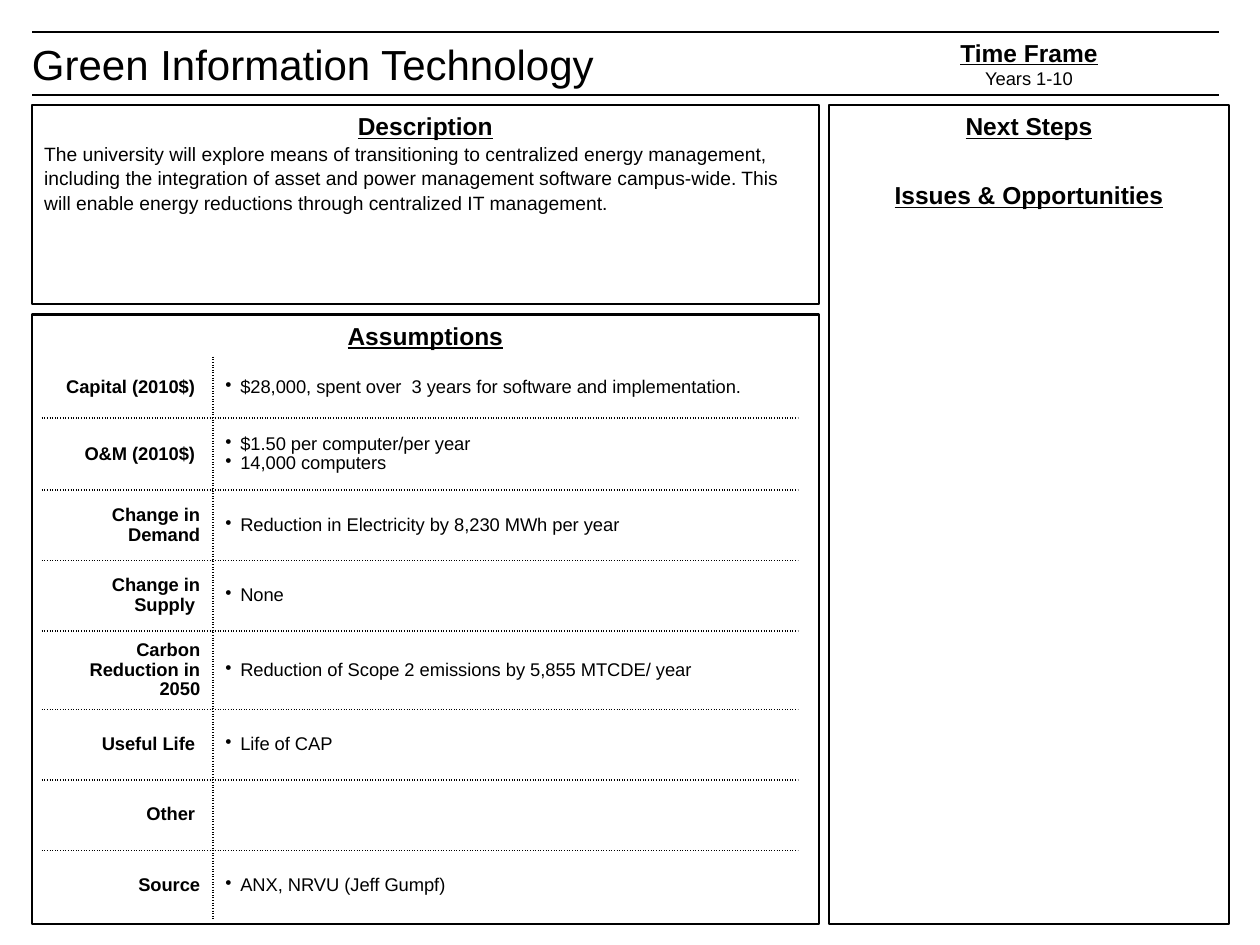
from collections import namedtuple
from dataclasses import dataclass

from lxml import etree
from pptx import Presentation, util as u
from pptx.dml import color
from pptx.enum import dml, shapes, text
from pptx.oxml import ns

Box = namedtuple("Box", "left top width height")  # centimetres


@dataclass(frozen=True)
class Theme:
    font: str = "Arial"
    ink: color.RGBColor = color.RGBColor(0, 0, 0)
    title: float = 24
    heading: float = 14
    body: float = 11
    small: float = 10.5
    rule: float = 1.25
    border: float = 1


THEME = Theme()
HEADING = dict(size=u.Pt(THEME.heading), bold=True, underline=True)
BODY = dict(size=u.Pt(THEME.body))
SMALL = dict(size=u.Pt(THEME.small))
LABEL = dict(SMALL, bold=True)
CENTER, RIGHT, LEFT = text.PP_ALIGN.CENTER, text.PP_ALIGN.RIGHT, text.PP_ALIGN.LEFT

DESCRIPTION = (
    "The university will explore means of transitioning to centralized energy "
    "management, including the integration of asset and power management software "
    "campus-wide. This will enable energy reductions through centralized IT management."
)
# label, row height in cm, bullet points
ASSUMPTIONS = [
    ("Capital (2010$) ", 1.24,
     ["$28,000, spent over  3 years for software and implementation."]),
    ("O&M (2010$) ", 1.45, ["$1.50 per computer/per year", "14,000 computers"]),
    ("Change in Demand", 1.42, ["Reduction in Electricity by 8,230 MWh per year"]),
    ("Change in Supply ", 1.42, ["None"]),
    ("Carbon Reduction in 2050", 1.58,
     ["Reduction of Scope 2 emissions by 5,855 MTCDE/ year"]),
    ("Useful Life ", 1.42, ["Life of CAP"]),
    ("Other ", 1.42, []),
    ("Source", 1.42, ["ANX, NRVU (Jeff Gumpf)"]),
]


def cm(box):
    return [u.Cm(length) for length in box]


def write(frame, lines, **layout):
    """Fill a text frame with (wording, font values, paragraph values)."""
    for name, value in layout.items():
        setattr(frame, name, value)
    for index, (wording, font, paragraph) in enumerate(lines):
        para = frame.paragraphs[0] if index == 0 else frame.add_paragraph()
        for name, value in paragraph.items():
            setattr(para, name, value)
        run = para.add_run()
        run.text = wording
        for name, value in dict(name=THEME.font, **font).items():
            setattr(run.font, name, value)
        run.font.color.rgb = THEME.ink


def add_rule(slide, left, right, height):
    rule = slide.shapes.add_connector(
        shapes.MSO_CONNECTOR.STRAIGHT,
        u.Cm(right), u.Cm(height), u.Cm(left), u.Cm(height))
    rule.line.color.rgb = THEME.ink
    rule.line.width = u.Pt(THEME.rule)
    etree.SubElement(rule._element.spPr, ns.qn("a:effectLst"))


def add_panel(slide, box, lines):
    panel = slide.shapes.add_shape(shapes.MSO_SHAPE.RECTANGLE, *cm(box))
    panel.shadow.inherit = False
    panel.fill.background()
    panel.line.color.rgb = THEME.ink
    panel.line.width = u.Pt(THEME.rule)
    write(panel.text_frame, lines, word_wrap=True,
          vertical_anchor=text.MSO_ANCHOR.TOP)


def add_bullet(para):
    properties = para._p.get_or_add_pPr()
    indent = u.Cm(0.3)
    properties.set("marL", str(indent))
    properties.set("indent", str(-indent))
    etree.SubElement(properties, ns.qn("a:buChar"), char="•")


def set_borders(cell, dotted):
    """Draw dotted lines on the named sides and none on the others."""
    properties = cell._tc.get_or_add_tcPr()
    for side in "LRTB":
        line = etree.SubElement(properties, ns.qn(f"a:ln{side}"),
                                w=str(u.Pt(THEME.border)))
        if side in dotted:
            fill = etree.SubElement(line, ns.qn("a:solidFill"))
            etree.SubElement(fill, ns.qn("a:srgbClr"), val=str(THEME.ink))
            etree.SubElement(line, ns.qn("a:prstDash"),
                             val=dml.MSO_LINE.ROUND_DOT.xml_value)
        else:
            etree.SubElement(line, ns.qn("a:noFill"))
    cell.fill.background()


def header(slide, box):
    title = slide.shapes.title
    title.left, title.top, title.width, title.height = cm(
        Box(box.left - 0.25, box.top, 15, box.height))
    write(title.text_frame,
          [("Green Information Technology", dict(size=u.Pt(THEME.title)),
            dict(alignment=LEFT))],
          word_wrap=False, auto_size=text.MSO_AUTO_SIZE.NONE,
          vertical_anchor=text.MSO_ANCHOR.MIDDLE)
    for height in (box.top, box.top + box.height):
        add_rule(slide, box.left, box.left + box.width, height)


def time_frame(slide, box):
    period = slide.shapes.add_textbox(*cm(box))
    write(period.text_frame,
          [("Time Frame", HEADING, dict(alignment=CENTER)),
           ("Years 1-10", SMALL, dict(alignment=CENTER))],
          word_wrap=True, vertical_anchor=text.MSO_ANCHOR.MIDDLE)


def description(slide, box):
    add_panel(slide, box, [
        ("Description", HEADING, dict(alignment=CENTER)),
        (DESCRIPTION, BODY, dict(alignment=LEFT, line_spacing=1.06))])


def next_steps(slide, box):
    add_panel(slide, box, [
        ("Next Steps", HEADING, dict(alignment=CENTER)),
        ("Issues & Opportunities", HEADING,
         dict(alignment=CENTER, space_before=u.Pt(22.5)))])


def assumptions(slide, box):
    add_panel(slide, box, [("Assumptions", HEADING, dict(alignment=CENTER))])
    heights = [height for _, height, _ in ASSUMPTIONS]
    grid = slide.shapes.add_table(
        len(ASSUMPTIONS), 2,
        *cm(Box(box.left + 0.2, box.top + 0.85, 15.24, sum(heights)))).table
    grid.first_row = grid.horz_banding = False
    for column, width in zip(grid.columns, (3.45, 11.79)):
        column.width = u.Cm(width)

    for index, (label, height, points) in enumerate(ASSUMPTIONS):
        grid.rows[index].height = u.Cm(height)
        label_cell, points_cell = grid.rows[index].cells
        tight = dict(line_spacing=0.97)
        write(label_cell.text_frame, [(label, LABEL, dict(tight, alignment=RIGHT))])
        write(points_cell.text_frame, [(point, SMALL, tight) for point in points])
        if points:
            for para in points_cell.text_frame.paragraphs:
                add_bullet(para)
        # Dotted lines between rows and columns only
        inner = ("T" if index else "") + ("B" if index < len(ASSUMPTIONS) - 1 else "")
        for cell, divider in ((label_cell, "R"), (points_cell, "L")):
            cell.vertical_anchor = text.MSO_ANCHOR.MIDDLE
            set_borders(cell, divider + inner)


def main():
    deck = Presentation()
    deck.slide_width, deck.slide_height = u.Cm(25.4), u.Cm(19.05)
    slide = deck.slides.add_slide(deck.slide_layouts[5])  # Title Only

    # Two columns below the header
    left, top, bottom, gap = 0.64, 2.12, 18.63, 0.21
    main_width, side_width = 15.87, 8.05
    side = left + main_width + gap
    split = 6.13

    header(slide, Box(left, 0.64, 23.93, 1.27))
    description(slide, Box(left, top, main_width, split - top))
    assumptions(slide, Box(left, split + gap, main_width, bottom - split - gap))
    time_frame(slide, Box(side, 0.64, side_width, 1.27))
    next_steps(slide, Box(side, top, side_width, bottom - top))
    deck.save("out.pptx")


if __name__ == "__main__":
    main()
